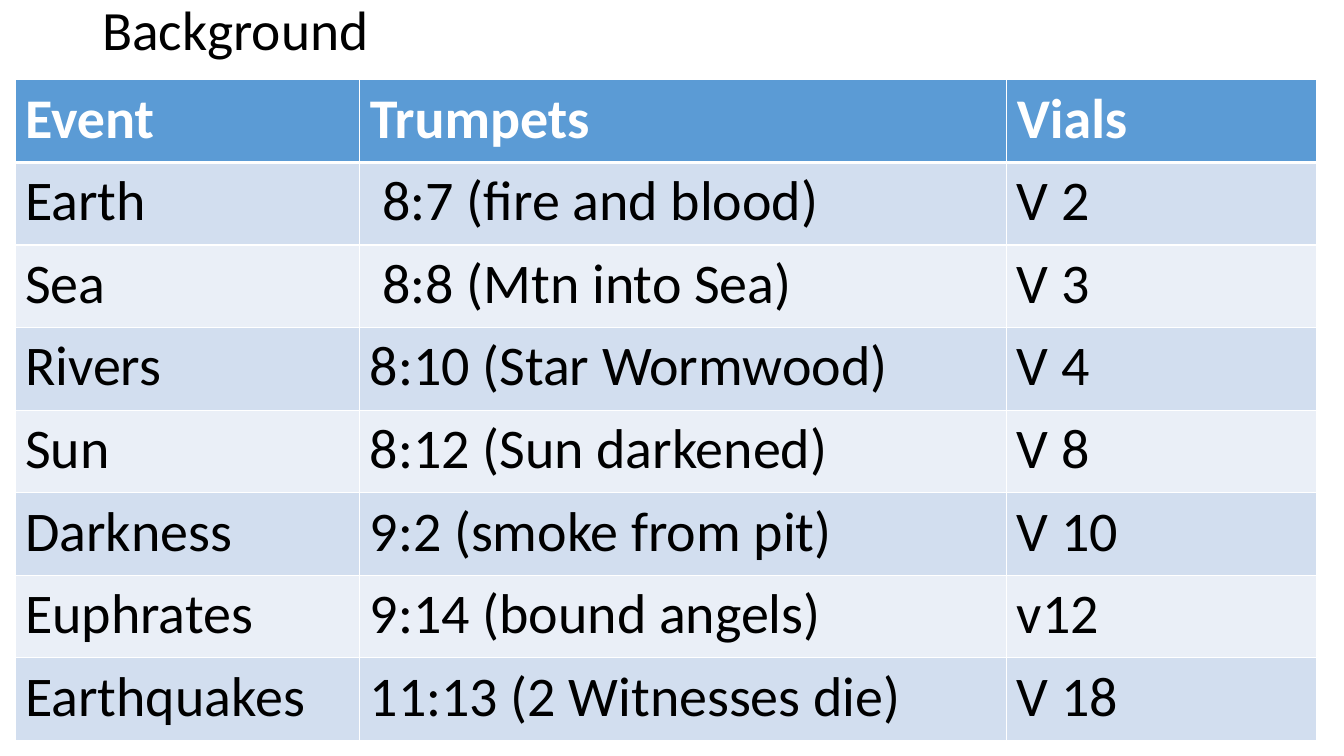
from dataclasses import dataclass

from lxml import etree
from pptx import Presentation
from pptx.dml.color import RGBColor
from pptx.enum.text import MSO_ANCHOR, MSO_AUTO_SIZE
from pptx.oxml.ns import qn
from pptx.util import Pt

MIDDLE = MSO_ANCHOR.MIDDLE
NO_AUTOFIT = MSO_AUTO_SIZE.NONE


@dataclass(frozen=True)
class Theme:
    font: str = "Calibri"
    title_size: float = 39.6
    table_size: float = 40
    text: str = "000000"
    header_text: str = "FFFFFF"
    header_fill: str = "5B9BD5"
    band_fills: tuple = ("D2DEEF", "EAEFF7")
    border: str = "FFFFFF"
    thin: float = 1
    thick: float = 3


class SlideBuilder:
    def __init__(self, slide, theme):
        self.slide = slide
        self.theme = theme

    def style(self, paragraph, size, color, bold=False):
        font = paragraph.font
        font.name = self.theme.font
        font.size = Pt(size)
        font.bold = bold
        font.color.rgb = RGBColor.from_string(color)

    def title(self, text, left, top, width, height):
        box = self.slide.shapes.add_textbox(Pt(left), Pt(top), Pt(width), Pt(height))
        frame = box.text_frame
        frame.word_wrap = True
        frame.auto_size = NO_AUTOFIT
        frame.vertical_anchor = MIDDLE
        paragraph = frame.paragraphs[0]
        paragraph.text = text
        paragraph.line_spacing = 0.9
        self.style(paragraph, self.theme.title_size, self.theme.text)

    def borders(self, cell, top, bottom):
        thin = self.theme.thin
        properties = cell._tc.get_or_add_tcPr()
        for side, width in (("L", thin), ("R", thin), ("T", top), ("B", bottom)):
            line = etree.SubElement(properties, qn(f"a:ln{side}"), w=str(Pt(width)))
            fill = etree.SubElement(line, qn("a:solidFill"))
            etree.SubElement(fill, qn("a:srgbClr"), val=self.theme.border)

    def table(self, rows, left, top, widths, row_height):
        theme = self.theme
        table = self.slide.shapes.add_table(
            len(rows), len(widths), Pt(left), Pt(top),
            Pt(sum(widths)), Pt(row_height * len(rows))).table
        for column, width in zip(table.columns, widths):
            column.width = Pt(width)
        for r, values in enumerate(rows):
            header = r == 0
            table.rows[r].height = Pt(row_height)
            fill = theme.header_fill if header else theme.band_fills[(r - 1) % 2]
            color = theme.header_text if header else theme.text
            # A thick rule separates the header from the body
            upper = theme.thick if r == 1 else theme.thin
            lower = theme.thick if header else theme.thin
            for c, value in enumerate(values):
                cell = table.cell(r, c)
                self.borders(cell, upper, lower)
                cell.fill.solid()
                cell.fill.fore_color.rgb = RGBColor.from_string(fill)
                paragraph = cell.text_frame.paragraphs[0]
                paragraph.text = value
                self.style(paragraph, theme.table_size, color, header)


EVENTS = [
    ("Event", "Trumpets", "Vials"),
    ("Earth", " 8:7 (fire and blood)", "V 2"),
    ("Sea", " 8:8 (Mtn into Sea)", "V 3"),
    ("Rivers", "8:10 (Star Wormwood)", "V 4"),
    ("Sun", "8:12 (Sun darkened)", "V 8"),
    ("Darkness", "9:2 (smoke from pit)", "V 10"),
    ("Euphrates", "9:14 (bound angels)", "v12"),
    ("Earthquakes", "11:13 (2 Witnesses die)", "V 18"),
]


def main():
    presentation = Presentation()
    presentation.slide_width = Pt(960)
    presentation.slide_height = Pt(540)
    slide = presentation.slides.add_slide(presentation.slide_layouts[6])
    builder = SlideBuilder(slide, Theme())

    # Heading
    builder.title("Background", 66, 5.8, 828, 34.5)

    # Trumpets and vials compared by event
    builder.table(EVENTS, 10.8, 57, (246.2, 462.2, 221), 59)

    presentation.save("out.pptx")


if __name__ == "__main__":
    main()
